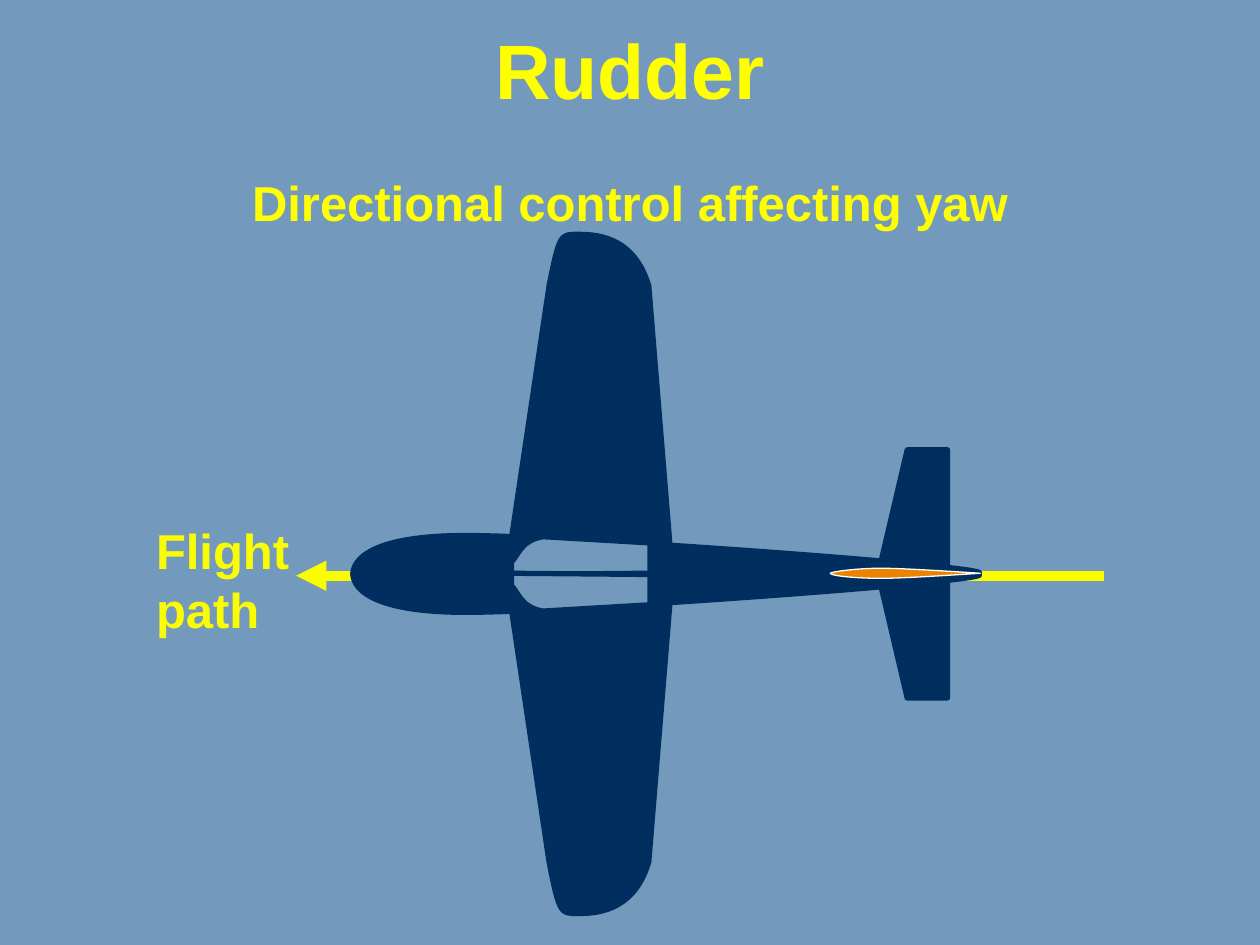
import pptx
import pptx.util
import pptx.dml.color
import pptx.enum.shapes
import pptx.enum.text
import pptx.oxml
import pptx.oxml.ns
import lxml.etree

Inch, Pt, qn = pptx.util.Inches, pptx.util.Pt, pptx.oxml.ns.qn
Align = pptx.enum.text.PP_ALIGN

SKY, NAVY, AMBER, WHITE = "739ABC", "002F5F", "E98300", "FFFFFF"
YELLOW, LEMON = "FFFF00", "FAFD00"
UPPER, LOWER = (4.56, -1), (4.55, 1)  # base line and direction of each half

HEAD = [("Rudder", 44, 0), ("Directional control affecting yaw", 28, 33)]
LABEL = [("Flight", 28, 0), ("path", 28, 0)]

# Outlines: x and distance from the base line. One point is a line end,
# three are the two handles and the end of a curve.
WING = [
    [(4.06, .29)], [(4.36, 2.3)],
    [(4.44, 2.7), (4.45, 2.7), (4.58, 2.7)],
    [(4.71, 2.7), (5.03, 2.7), (5.15, 2.29)], [(5.32, .21)]]
TAIL = [[(6.97, .01)], [(7.2, .99)], [(7.52, .99)], [(7.52, .01)]]
BODY = [
    [(2.8, 0)], [(2.8, .08), (2.87, .31), (3.7, .31)],
    [(4.52, .31), (7.92, .06), (7.77, .01)]]
CABIN = [
    [(4.06, 0)], [(4.06, .1)], [(4.11, .14), (4.13, .27), (4.31, .3)],
    [(5.16, .25)], [(5.16, .01)]]
RUDDER = [
    [(6.59, .01)],
    [(6.59, .02), (6.79, .05), (6.99, .05)],
    [(7.18, .05), (7.62, .02), (7.78, .01)],
    [(7.62, 0), (7.18, -.03), (6.99, -.03)],
    [(6.79, -.03), (6.59, -.01), (6.59, .01)]]
HALF = [(WING, NAVY), (TAIL, NAVY), (BODY, NAVY), (CABIN, SKY)]


def rgb(code):
    return pptx.dml.color.RGBColor.from_string(code)


def write(frame, rows, color, align, wrap):
    form = dict(word_wrap=wrap,
                vertical_anchor=pptx.enum.text.MSO_ANCHOR.TOP,
                auto_size=pptx.enum.text.MSO_AUTO_SIZE.NONE)
    for key, val in form.items():
        setattr(frame, key, val)
    for i, (text, size, gap) in enumerate(rows):
        para = frame.paragraphs[0] if i == 0 else frame.add_paragraph()
        para.text, para.alignment = text, align
        para.space_before = Pt(gap)
        look = dict(name="Arial", size=Pt(size), bold=True)
        for key, val in look.items():
            setattr(para.font, key, val)
        para.font.color.rgb = rgb(color)


def bend(shape, parts):
    """Join the three line steps of each curve into one cubic step."""
    steps = shape.element.findall(".//" + qn("a:lnTo"))
    for part in parts:
        own, steps = steps[:len(part)], steps[len(part):]
        if len(part) == 3:
            curve = lxml.etree.Element(qn("a:cubicBezTo"))
            own[0].addprevious(curve)
            for step in own:
                curve.append(step[0])
                step.getparent().remove(step)


def draw(slide, parts, fill, half, line=NAVY, width=3):
    base, way = half
    pts = [(Inch(x), Inch(base + way * y)) for part in parts for x, y in part]
    pen = slide.shapes.build_freeform(*pts[0])
    pen.add_line_segments(pts[1:], close=True)
    shape = pen.convert_to_shape()
    bend(shape, parts[1:])
    shape.shadow.inherit = False
    shape.fill.solid()
    shape.fill.fore_color.rgb = rgb(fill)
    shape.line.color.rgb = rgb(line)
    shape.line.width = Pt(width)
    return shape


def arrow(slide, x1, x2, y):
    line = slide.shapes.add_connector(
        pptx.enum.shapes.MSO_CONNECTOR.STRAIGHT,
        Inch(x1), Inch(y), Inch(x2), Inch(y))
    line.line.color.rgb = rgb(LEMON)
    line.line.width = Pt(5.75)
    props = line.element.spPr
    edge = props.find(qn("a:ln"))
    lxml.etree.SubElement(edge, qn("a:headEnd"), type="triangle")
    lxml.etree.SubElement(props, qn("a:effectLst"))


def main():
    deck = pptx.Presentation()
    deck.slide_width, deck.slide_height = Inch(10), Inch(7.5)
    slide = deck.slides.add_slide(deck.slide_layouts[5])
    slide.background.fill.solid()
    slide.background.fill.fore_color.rgb = rgb(SKY)

    title = slide.shapes.title
    place = dict(left=0, top=.13, width=10, height=1.78)
    for key, val in place.items():
        setattr(title, key, Inch(val))
    write(title.text_frame, HEAD, YELLOW, Align.CENTER, True)

    arrow(slide, 2.35, 8.76, 4.57)
    label = slide.shapes.add_textbox(
        Inch(1.14), Inch(4.08), Inch(1.27), Inch(1.04))
    write(label.text_frame, LABEL, LEMON, Align.LEFT, False)

    plane = [draw(slide, parts, fill, half)
             for half in (UPPER, LOWER) for parts, fill in HALF]
    plane.append(draw(slide, RUDDER, AMBER, UPPER, WHITE, .75))
    slide.shapes.add_group_shape(plane)
    deck.save("out.pptx")


if __name__ == "__main__":
    main()
